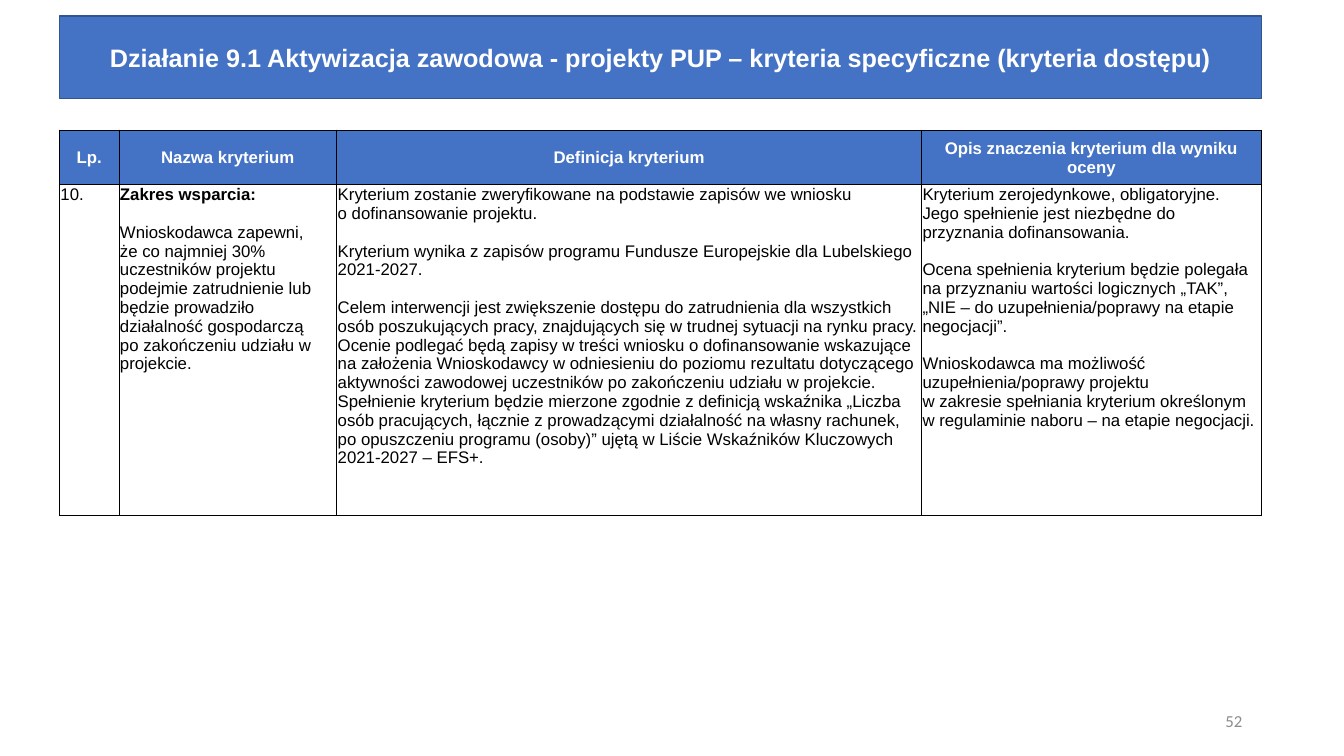
import pptx
import pptx.util
import pptx.dml.color
import pptx.enum.text
import pptx.oxml
import pptx.oxml.ns

Inches = pptx.util.Inches
Pt = pptx.util.Pt
ALIGN = pptx.enum.text.PP_ALIGN
MIDDLE = pptx.enum.text.MSO_ANCHOR.MIDDLE
TOP = pptx.enum.text.MSO_ANCHOR.TOP

BLUE, WHITE, BLACK = "4472C4", "FFFFFF", "000000"
LEFT, WIDTH = 0.59, 11.92
COLS = [0.59, 2.16, 5.8, 3.37]
ROWS = [0.54, 3.28]
TITLE = "Działanie 9.1 Aktywizacja zawodowa - projekty PUP – kryteria specyficzne (kryteria dostępu)"
HEADS = ["Lp.", "Nazwa kryterium", "Definicja kryterium", "Opis znaczenia kryterium dla wyniku oceny"]
BODY = [
    ["10."],
    [
        "Zakres wsparcia:",
        "Wnioskodawca zapewni,\n"
        "że co najmniej 30% uczestników projektu podejmie zatrudnienie lub będzie prowadziło "
        "działalność gospodarczą\n"
        "po zakończeniu udziału w projekcie.",
    ],
    [
        "Kryterium zostanie zweryfikowane na podstawie zapisów we wniosku\n"
        "o dofinansowanie projektu.",
        "Kryterium wynika z zapisów programu Fundusze Europejskie dla Lubelskiego 2021-2027.",
        "Celem interwencji jest zwiększenie dostępu do zatrudnienia dla wszystkich osób "
        "poszukujących pracy, znajdujących się w trudnej sytuacji na rynku pracy. "
        "Ocenie podlegać będą zapisy w treści wniosku o dofinansowanie wskazujące na założenia "
        "Wnioskodawcy w odniesieniu do poziomu rezultatu dotyczącego aktywności zawodowej "
        "uczestników po zakończeniu udziału w projekcie.\n"
        "Spełnienie kryterium będzie mierzone zgodnie z definicją wskaźnika „Liczba osób "
        "pracujących, łącznie z prowadzącymi działalność na własny rachunek, po opuszczeniu "
        "programu (osoby)” ujętą w Liście Wskaźników Kluczowych 2021-2027 – EFS+.",
    ],
    [
        "Kryterium zerojedynkowe, obligatoryjne. Jego spełnienie jest niezbędne do przyznania "
        "dofinansowania.",
        "Ocena spełnienia kryterium będzie polegała na przyznaniu wartości logicznych „TAK”,\n"
        "„NIE – do uzupełnienia/poprawy na etapie negocjacji”.",
        "Wnioskodawca ma możliwość uzupełnienia/poprawy projektu\n"
        "w zakresie spełniania kryterium określonym w regulaminie naboru – na etapie negocjacji.",
    ],
]


def shade(hue):
    """Turn a hex string into a colour."""
    return pptx.dml.color.RGBColor.from_string(hue)


def write(frame, blocks, size=12, face="Arial", hue=BLACK, bold=False, align=ALIGN.LEFT):
    """Fill a text frame, with a gap of one line between blocks."""
    frame.word_wrap = True
    para = None
    for block in blocks:
        for num, line in enumerate(block.split("\n")):
            gap = para is not None and num == 0
            para = frame.add_paragraph() if para is not None else frame.paragraphs[0]
            para.alignment = align
            para.space_before = Pt(13.4 if gap else 0)
            run = para.add_run()
            run.text = line
            font = run.font
            font.size, font.name, font.bold = Pt(size), face, bold
            font.color.rgb = shade(hue)


def place(shape, left, top, width, height):
    """Set the place and size of a shape."""
    shape.left, shape.top = Inches(left), Inches(top)
    shape.width, shape.height = Inches(width), Inches(height)


def add_title(slide):
    """Turn the title placeholder into the blue banner."""
    title = slide.shapes.title
    place(title, LEFT, 0.16, WIDTH, 0.82)
    title.fill.solid()
    title.fill.fore_color.rgb = shade(BLUE)
    title.line.color.rgb = shade("325491")
    title.line.width = Pt(1)
    title.text_frame.vertical_anchor = MIDDLE
    write(title.text_frame, [TITLE], size=18, hue=WHITE, bold=True, align=ALIGN.CENTER)


def edge(cell):
    """Draw thin black borders around a cell."""
    props = cell._tc.get_or_add_tcPr()
    for at, side in enumerate(["lnL", "lnR", "lnT", "lnB"]):
        line = pptx.oxml.parse_xml(
            f'<a:{side} {pptx.oxml.ns.nsdecls("a")} w="6350"><a:solidFill>'
            f'<a:srgbClr val="{BLACK}"/></a:solidFill></a:{side}>'
        )
        props.insert(at, line)


def style(cell, head):
    """Set the fill, margins and borders of a cell."""
    cell.margin_left = cell.margin_right = cell.margin_top = Inches(0.01)
    cell.margin_bottom = 0
    cell.vertical_anchor = MIDDLE if head else TOP
    if head:
        cell.fill.solid()
        cell.fill.fore_color.rgb = shade(BLUE)
    else:
        cell.fill.background()
    edge(cell)


def add_grid(slide):
    """Add the table of criteria."""
    grid = slide.shapes.add_table(
        len(ROWS), len(COLS), Inches(LEFT), Inches(1.29), Inches(WIDTH), Inches(sum(ROWS))
    ).table
    for row, height in zip(grid.rows, ROWS):
        row.height = Inches(height)
    for num, width in enumerate(COLS):
        grid.columns[num].width = Inches(width)
        top, low = grid.cell(0, num), grid.cell(1, num)
        style(top, True)
        style(low, False)
        write(top.text_frame, [HEADS[num]], hue=WHITE, bold=True, align=ALIGN.CENTER)
        write(low.text_frame, BODY[num])
    grid.cell(1, 1).text_frame.paragraphs[0].runs[0].font.bold = True


def add_page(slide):
    """Add the page number."""
    box = slide.shapes.add_textbox(Inches(9.42), Inches(6.95), Inches(3), Inches(0.4))
    box.text_frame.vertical_anchor = MIDDLE
    write(box.text_frame, ["52"], face="Calibri", hue="8C8C8C", align=ALIGN.RIGHT)


def main():
    """Build and save the slide."""
    deck = pptx.Presentation()
    deck.slide_width, deck.slide_height = Inches(13.33), Inches(7.5)
    slide = deck.slides.add_slide(deck.slide_layouts[5])
    add_title(slide)
    add_grid(slide)
    add_page(slide)
    deck.save("out.pptx")


if __name__ == "__main__":
    main()
